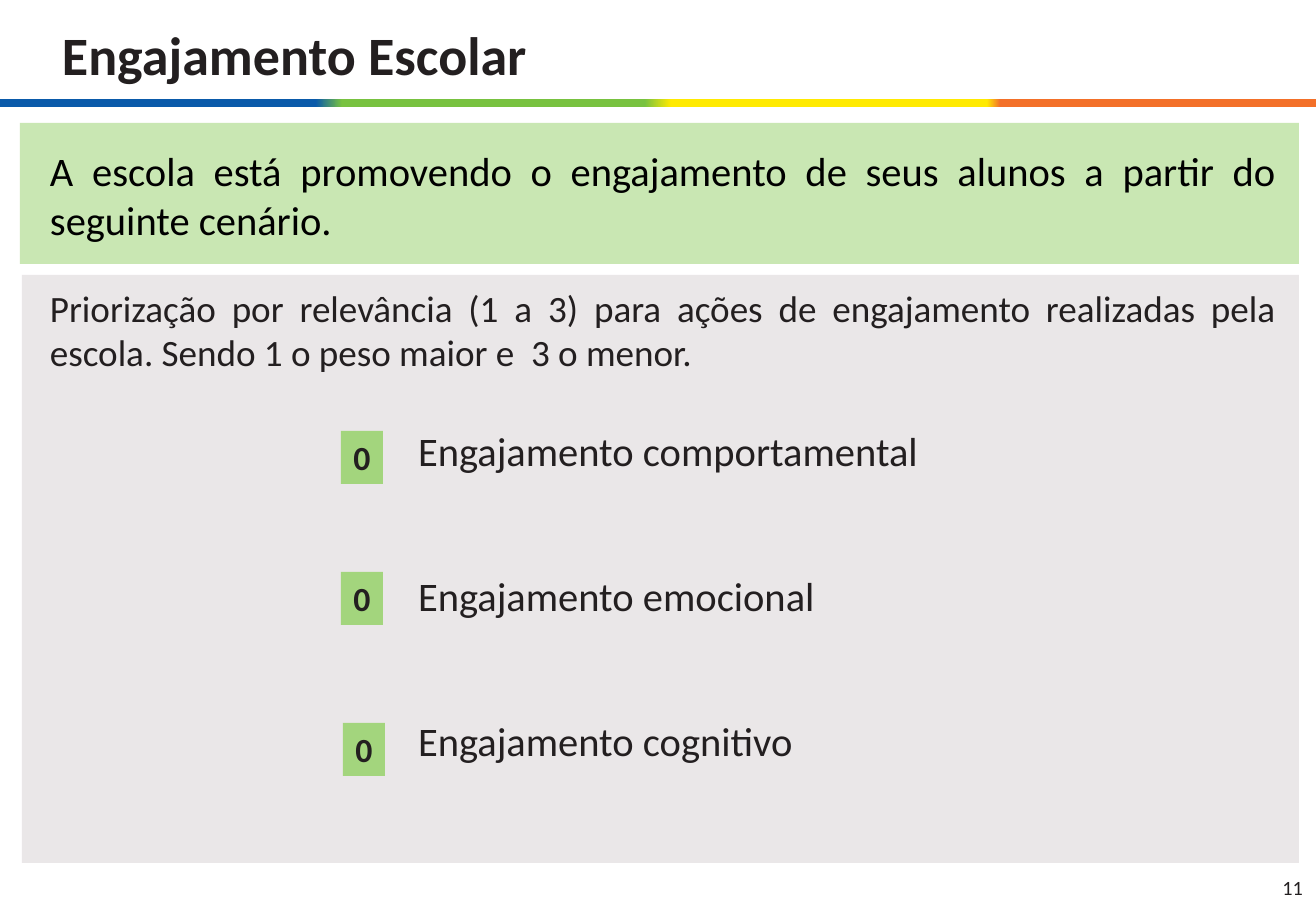
from lxml import etree
from pptx import Presentation
from pptx.dml.color import RGBColor
from pptx.enum.shapes import MSO_SHAPE as Shape
from pptx.enum.text import MSO_ANCHOR as Anchor, MSO_AUTO_SIZE as AutoSize, PP_ALIGN as Align
from pptx.oxml.ns import qn
from pptx.util import Pt

# Content
TITLE = "Engajamento Escolar"
PAGE_NUMBER = "11"
FONT, DARK, BLACK = "Calibri", "231F20", "000000"

# Panels: text, box in px, (left, top, right) insets in px, size, fill, text colour
PANELS = [
    ("A escola está promovendo o engajamento de seus alunos a partir do seguinte cenário.",
     (20, 123, 1279, 141), (30, 23, 23), 24, "C9E7B3", BLACK),
    ("Priorização por relevância (1 a 3) para ações de engajamento realizadas pela escola. "
     "Sendo 1 o peso maior e  3 o menor.",
     (22, 275, 1277, 588), (28, 10, 23), 22, "EAE7E8", DARK),
]

# Engagement types: label, score, left and top of the score box in px
ENGAGEMENTS = [
    ("Engajamento comportamental", "0", 341, 431),
    ("Engajamento emocional", "0", 341, 572),
    ("Engajamento cognitivo", "0", 343, 723),
]
SCORE_WIDTH, SCORE_HEIGHT, SCORE_FILL = 42, 53, "A3D57D"

# Stripe: position in percent, colour
STRIPE_STOPS = [
    (0, "0A5AAA"), (24, "0A5AAA"), (26, "78C240"), (49, "78C240"),
    (51, "FFEA01"), (75, "FFEA01"), (76, "F37029"), (100, "F37029"),
]
WIDTH, HEIGHT = 1316, 911


def px(length):
    return round(length * 914400 / 121.5)


def color(value):
    return RGBColor.from_string(value)


def place(shape, left, top, width, height):
    shape.left, shape.top = px(left), px(top)
    shape.width, shape.height = px(width), px(height)


def format_frame(frame, anchor, insets):
    frame.word_wrap = True
    frame.auto_size = AutoSize.NONE
    frame.vertical_anchor = anchor
    frame.margin_left, frame.margin_top, frame.margin_right, frame.margin_bottom = map(px, insets)


def format_paragraph(paragraph, size, align=Align.LEFT, bold=False, text_color=DARK):
    paragraph.alignment = align
    font = paragraph.font
    font.name, font.size, font.bold = FONT, Pt(size), bold
    font.color.rgb = color(text_color)


def add_rectangle(box, fill=None):
    shape = slide.shapes.add_shape(Shape.RECTANGLE, *map(px, box))
    shape.shadow.inherit = False
    shape.line.fill.background()
    if fill:
        shape.fill.solid()
        shape.fill.fore_color.rgb = color(fill)
    return shape


presentation = Presentation()
presentation.slide_width, presentation.slide_height = px(WIDTH), px(HEIGHT)
slide = presentation.slides.add_slide(presentation.slide_layouts[1])
title, body = slide.placeholders

# Title
place(title, 50, 6, 1028, 96)
title.text_frame.text = TITLE
format_frame(title.text_frame, Anchor.MIDDLE, (12, 6, 12, 6))
format_paragraph(title.text_frame.paragraphs[0], 32, bold=True)

# Four-colour stripe
stripe = add_rectangle((0, 99, WIDTH, 8))
stripe.fill.gradient()
stripe.fill.gradient_angle = 0
stop_list = stripe._element.spPr.find(qn("a:gradFill")).find(qn("a:gsLst"))
for stop in list(stop_list):
    stop_list.remove(stop)
for position, stop_color in STRIPE_STOPS:
    stop = etree.SubElement(stop_list, qn("a:gs"), pos=str(position * 1000))
    etree.SubElement(stop, qn("a:srgbClr"), val=stop_color)

# Text panels
for text, box, insets, size, fill, text_color in PANELS:
    panel = add_rectangle(box, fill)
    panel.text_frame.text = text
    format_frame(panel.text_frame, Anchor.TOP, (*insets, 0))
    format_paragraph(panel.text_frame.paragraphs[0], size, Align.JUSTIFY, text_color=text_color)

# Engagement list, in front of the panels
slide.shapes._spTree.append(body._element)
place(body, 406, 420, 659, 356)
format_frame(body.text_frame, Anchor.TOP, (12, 6, 12, 6))
body.text_frame.text = "\n".join(label for label, *_ in ENGAGEMENTS)
for index, paragraph in enumerate(body.text_frame.paragraphs):
    properties = paragraph._p.get_or_add_pPr()
    properties.set("marL", "0")
    properties.set("indent", "0")
    etree.SubElement(properties, qn("a:buNone"))
    paragraph.space_before = Pt(57 if index else 0)
    format_paragraph(paragraph, 24)

# Score boxes
for _, score, left, top in ENGAGEMENTS:
    score_box = add_rectangle((left, top, SCORE_WIDTH, SCORE_HEIGHT), SCORE_FILL)
    score_box.text_frame.text = score
    format_frame(score_box.text_frame, Anchor.TOP, (0, 6, 0, 6))
    format_paragraph(score_box.text_frame.paragraphs[0], 20, Align.CENTER, bold=True)

# Page number
number_box = slide.shapes.add_textbox(*map(px, (1232, 864, 83, 47)))
number_box.text_frame.text = PAGE_NUMBER
format_frame(number_box.text_frame, Anchor.MIDDLE, (12, 6, 12, 6))
format_paragraph(number_box.text_frame.paragraphs[0], 12, Align.RIGHT)

presentation.save("out.pptx")
